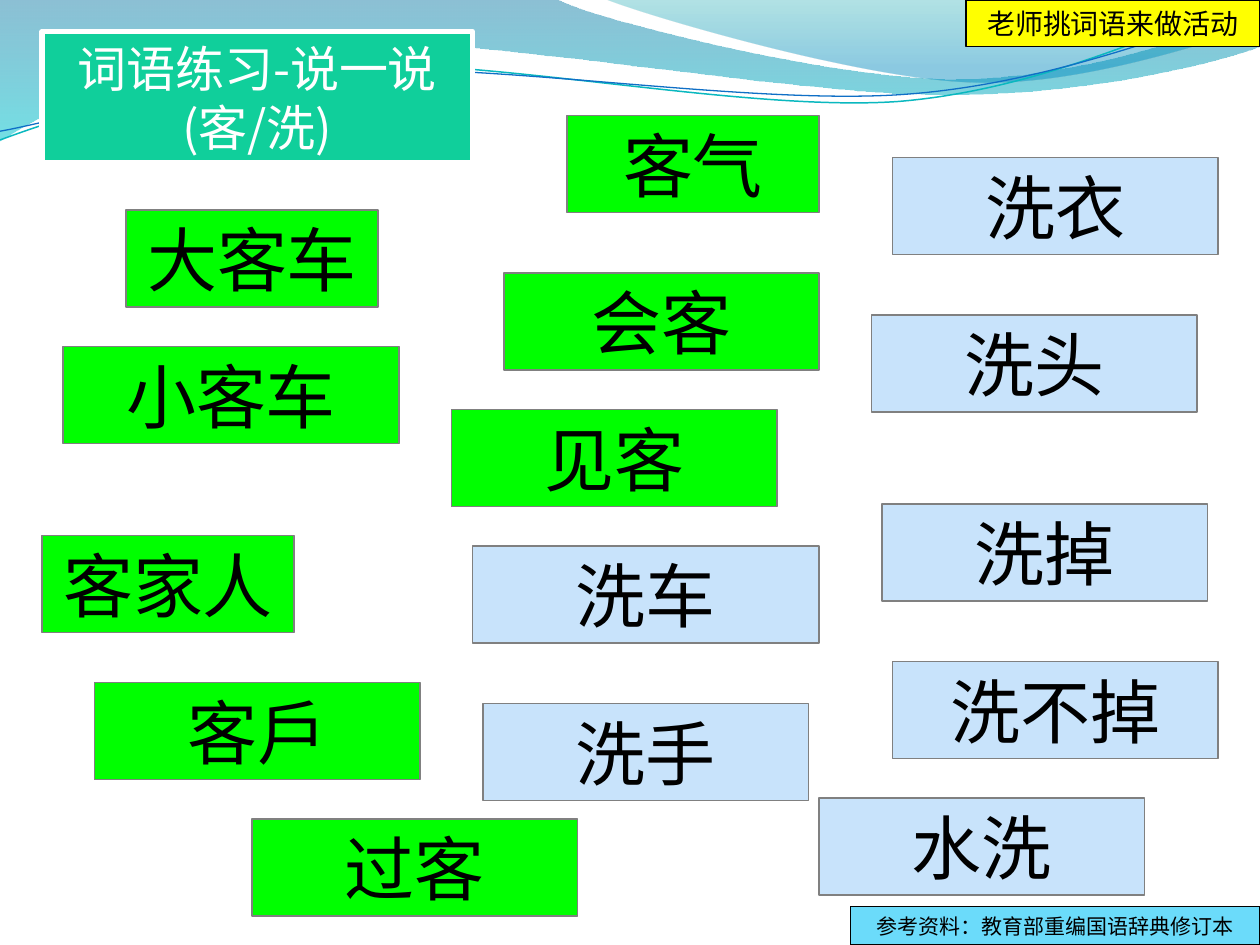
from dataclasses import dataclass
from math import cos, radians, sin

from lxml.etree import SubElement
from pptx import Presentation
from pptx.dml.color import RGBColor
from pptx.enum.shapes import MSO_SHAPE
from pptx.enum.text import MSO_ANCHOR, MSO_AUTO_SIZE, PP_ALIGN
from pptx.oxml.ns import qn
from pptx.util import Pt


@dataclass(frozen=True)
class Theme:
    font: str = "Noto Sans CJK SC"
    guest: str = "00FF00"
    wash: str = "C8E3FB"
    card_line: str = "808080"
    title: str = "10CF9B"
    source: str = "6BDBFA"
    note: str = "FFFF00"
    black: str = "000000"
    white: str = "FFFFFF"
    wave_blue: str = "0074A1"
    wave_cyan: str = "00C6CF"
    crest_teal: str = "00A1A9"
    crest_blue: str = "008BBF"
    teal_line: str = "0AB8BF"
    blue_line: str = "0F6FC6"
    word_size: int = 40
    title_size: int = 28
    note_size: int = 16
    source_size: int = 12


theme = Theme()


def add_curve(page, path, close, turn=0):
    middle_x, middle_y = 360, 42
    cosine, sine = cos(radians(-turn)), sin(radians(-turn))
    steps = [
        [(Pt(middle_x + (x - middle_x) * cosine - (y - middle_y) * sine),
          Pt(middle_y + (x - middle_x) * sine + (y - middle_y) * cosine))
         for x, y in zip(step[::2], step[1::2])]
        for step in path
    ]
    builder = page.shapes.build_freeform(*steps[0][0])
    builder.add_line_segments([step[-1] for step in steps[1:]], close=close)
    curve = builder.convert_to_shape()
    segments = list(curve._element.spPr.iter(qn("a:lnTo")))
    for segment, step in zip(segments, steps[1:]):
        if len(step) == 3:
            segment.tag = qn("a:cubicBezTo")
            segment.remove(segment[0])
            for x, y in step:
                SubElement(segment, qn("a:pt"), x=str(x - curve.left), y=str(y - curve.top))
    curve.rotation = turn
    curve.shadow.inherit = False
    return curve


def add_box(page, text, place, fill, size, line=theme.black, line_width=0.75, color=theme.black):
    box = page.shapes.add_shape(MSO_SHAPE.RECTANGLE, *[Pt(length) for length in place])
    box.shadow.inherit = False
    box.fill.solid()
    box.fill.fore_color.rgb = RGBColor.from_string(fill)
    box.line.color.rgb = RGBColor.from_string(line)
    box.line.width = Pt(line_width)
    frame = box.text_frame
    frame.word_wrap = True
    frame.auto_size = MSO_AUTO_SIZE.NONE
    frame.vertical_anchor = MSO_ANCHOR.MIDDLE
    frame.text = text
    para = frame.paragraphs[0]
    para.alignment = PP_ALIGN.CENTER
    span = para.runs[0]
    span.font.size = Pt(size)
    span.font.name = theme.font
    span.font.color.rgb = RGBColor.from_string(color)
    SubElement(span.font._element, qn("a:ea"), typeface=theme.font)


deck = Presentation()
deck.slide_width, deck.slide_height = Pt(720), Pt(540)
page = deck.slides.add_slide(deck.slide_layouts[6])

wave = [
    (0, 0), (317, -1), (343, 12, 478, 45, 546, 45), (614, 45, 690, 19, 720, 6),
    (721, 26), (708, 32, 626, 55, 537, 54), (447, 54, 275, 20, 185, 24),
    (93, 26, 33, 60, -1, 81), (0, 0),
]
crest = [
    (345, -1), (366, 8, 491, 45, 554, 47), (616, 50, 692, 23, 720, 15),
    (720, 0), (345, -1),
]
for path, stops in [
    (wave, [(0, theme.wave_blue, 45), (1, theme.wave_cyan, 55)]),
    (crest, [(0, theme.crest_teal, 30), (0.8, theme.crest_blue, 45)]),
]:
    band = add_curve(page, path, True)
    band.line.fill.background()
    band.fill.gradient()
    band.fill.gradient_angle = 270
    for stop, (position, color, opacity) in zip(band.fill.gradient_stops, stops):
        stop.position = position
        stop.color.rgb = RGBColor.from_string(color)
    marks = list(band._element.spPr.iter(qn("a:srgbClr")))
    for mark, (position, color, opacity) in zip(marks, stops):
        SubElement(mark, qn("a:alpha"), val=str(opacity * 1000))

teal_path = [(0, 80), (35, 67, 114, 41, 199, 37), (284, 34, 427, 64, 513, 58), (600, 51, 675, 11, 719, -1)]
blue_path = [(0, 75), (34, 69, 118, 44, 204, 40), (290, 37, 430, 60, 516, 54), (602, 48, 678, 15, 720, 4)]
for path, color, width in [(teal_path, theme.teal_line, 0.85), (blue_path, theme.blue_line, 0.75)]:
    strand = add_curve(page, path, False, 357.3)
    strand.fill.background()
    strand.line.color.rgb = RGBColor.from_string(color)
    strand.line.width = Pt(width)

guest_words = [
    ("会客", 288, 156, 180), ("客家人", 24, 306, 144), ("大客车", 72, 120, 144),
    ("小客车", 36, 198, 192), ("客戶", 54, 390, 186), ("过客", 144, 468, 186),
    ("客气", 324, 66, 144), ("见客", 258, 234, 186),
]
wash_words = [
    ("洗车", 270, 312, 198), ("水洗", 468, 456, 186), ("洗衣", 510, 90, 186),
    ("洗手", 276, 402, 186), ("洗掉", 504, 288, 186), ("洗头", 498, 180, 186),
    ("洗不掉", 510, 378, 186),
]
for words, fill in [(guest_words, theme.guest), (wash_words, theme.wash)]:
    for word, left, top, width in words:
        add_box(page, word, (left, top, width, 55.5), fill, theme.word_size, theme.card_line)

add_box(page, "词语练习-说一说(客/洗)", (24, 18, 246, 75), theme.title,
        theme.title_size, theme.white, 3, theme.white)
add_box(page, "参考资料：教育部重编国语辞典修订本", (486, 518.2, 234, 21.8), theme.source, theme.source_size)
add_box(page, "老师挑词语来做活动", (552, 0, 168, 26.6), theme.note, theme.note_size)

deck.save("out.pptx")
